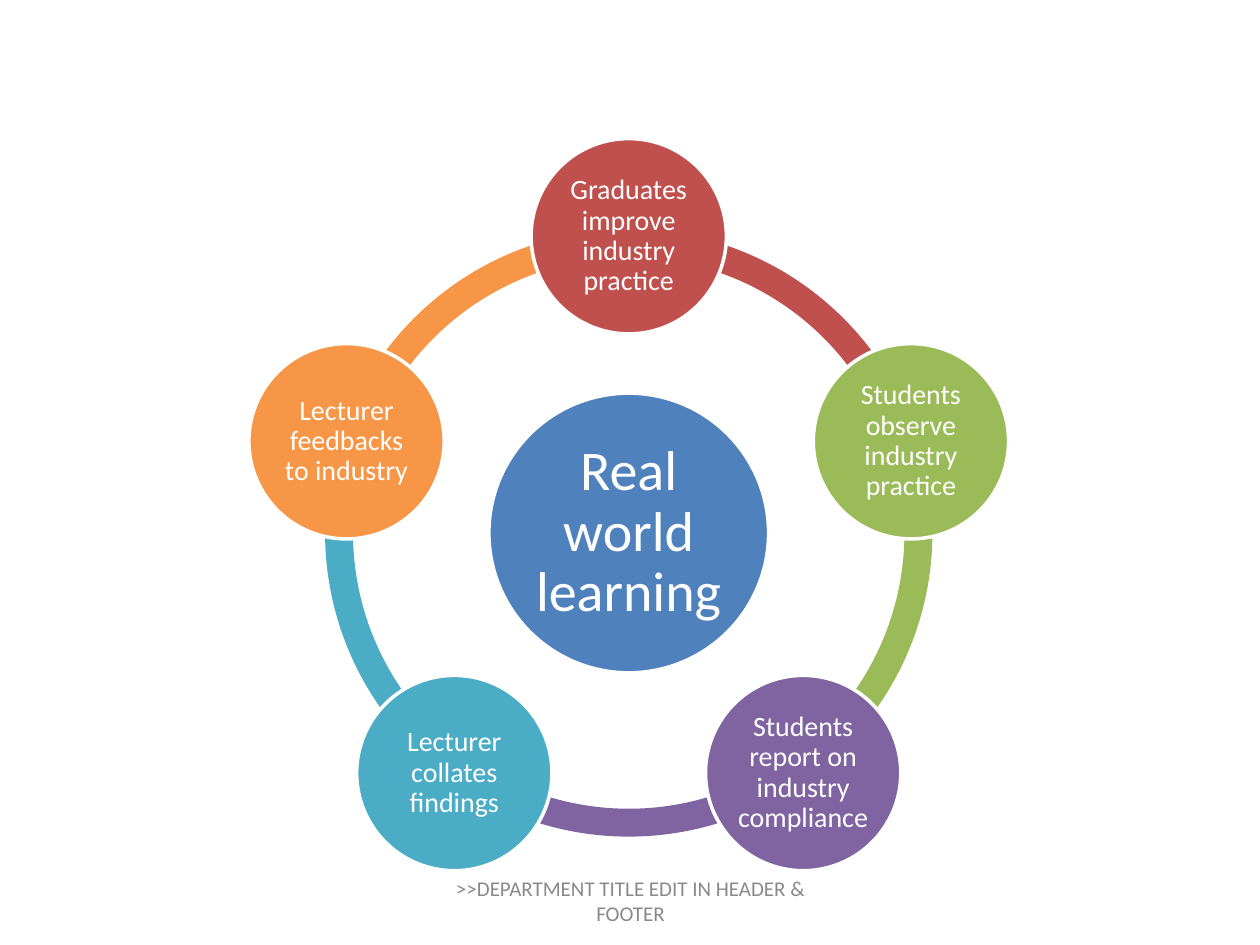
from math import cos, radians, sin

from pptx import Presentation
from pptx.dml.color import RGBColor
from pptx.enum.shapes import MSO_SHAPE
from pptx.enum.text import MSO_ANCHOR, PP_ALIGN
from pptx.util import Inches, Pt

COLORS = {
    "blue": "4F81BD",
    "red": "C0504D",
    "green": "9BBB59",
    "purple": "8064A2",
    "teal": "4BACC6",
    "orange": "F79646",
    "white": "FFFFFF",
    "gray": "898989",
}

STEPS = [
    ("Graduates improve industry practice", "red"),
    ("Students observe industry practice", "green"),
    ("Students report on industry compliance", "purple"),
    ("Lecturer collates findings", "teal"),
    ("Lecturer feedbacks to industry", "orange"),
]

CENTER_X, CENTER_Y = 4.99, 4.23
RING_SIZE = 4.82
RING_THICKNESS = 0.046
ORBIT_RADIUS = 2.355
HUB_SIZE, STEP_SIZE = 2.22, 1.55
TOP_ANGLE = 270
STEP_ANGLE = 360 / len(STEPS)
ADJUSTMENT_PER_DEGREE = 0.6


def color(name):
    return RGBColor.from_string(COLORS[name])


def write_text(shape, text, size, color_name, line_spacing=None):
    frame = shape.text_frame
    frame.text = text
    frame.word_wrap = True
    frame.vertical_anchor = MSO_ANCHOR.MIDDLE
    para = frame.paragraphs[0]
    para.alignment = PP_ALIGN.CENTER
    if line_spacing:
        para.line_spacing = line_spacing
    font = para.runs[0].font
    font.name = "Calibri"
    font.size = Pt(size)
    font.color.rgb = color(color_name)


def add_centered(shapes, kind, x, y, size, fill):
    shape = shapes.add_shape(kind, Inches(x - size / 2), Inches(y - size / 2),
                             Inches(size), Inches(size))
    shape.shadow.inherit = False
    shape.fill.solid()
    shape.fill.fore_color.rgb = color(fill)
    return shape


def add_arc(shapes, start, fill):
    arc = add_centered(shapes, MSO_SHAPE.BLOCK_ARC, CENTER_X, CENTER_Y, RING_SIZE, fill)
    arc.line.fill.background()
    arc.adjustments[0] = start % 360 * ADJUSTMENT_PER_DEGREE
    arc.adjustments[1] = (start + STEP_ANGLE) % 360 * ADJUSTMENT_PER_DEGREE
    arc.adjustments[2] = RING_THICKNESS


def add_circle(shapes, x, y, size, fill, text, text_size, inset):
    circle = add_centered(shapes, MSO_SHAPE.OVAL, x, y, size, fill)
    circle.line.color.rgb = color("white")
    circle.line.width = Pt(2)
    frame = circle.text_frame
    frame.margin_left = frame.margin_right = Inches(inset)
    frame.margin_top = frame.margin_bottom = Inches(inset)
    write_text(circle, text, text_size, "white", 0.9)


def add_cycle(page):
    shapes = page.shapes.add_group_shape().shapes
    angles = [TOP_ANGLE + index * STEP_ANGLE for index in range(len(STEPS))]
    for angle, (_, fill) in reversed(list(zip(angles, STEPS))):
        add_arc(shapes, angle, fill)
    add_circle(shapes, CENTER_X, CENTER_Y, HUB_SIZE, "blue", "Real world learning", 32, 0.04)
    for angle, (text, fill) in zip(angles, STEPS):
        x = CENTER_X + ORBIT_RADIUS * cos(radians(angle))
        y = CENTER_Y + ORBIT_RADIUS * sin(radians(angle))
        add_circle(shapes, x, y, STEP_SIZE, fill, text, 16, 0.02)


def add_footer(page):
    box = page.shapes.add_textbox(Inches(3.42), Inches(6.95), Inches(3.17), Inches(0.4))
    write_text(box, ">>DEPARTMENT TITLE EDIT IN HEADER & FOOTER", 12, "gray")


def main():
    deck = Presentation()
    deck.slide_width, deck.slide_height = Inches(10), Inches(7.5)
    page = deck.slides.add_slide(deck.slide_layouts[6])
    add_footer(page)
    add_cycle(page)
    deck.save("out.pptx")


if __name__ == "__main__":
    main()
